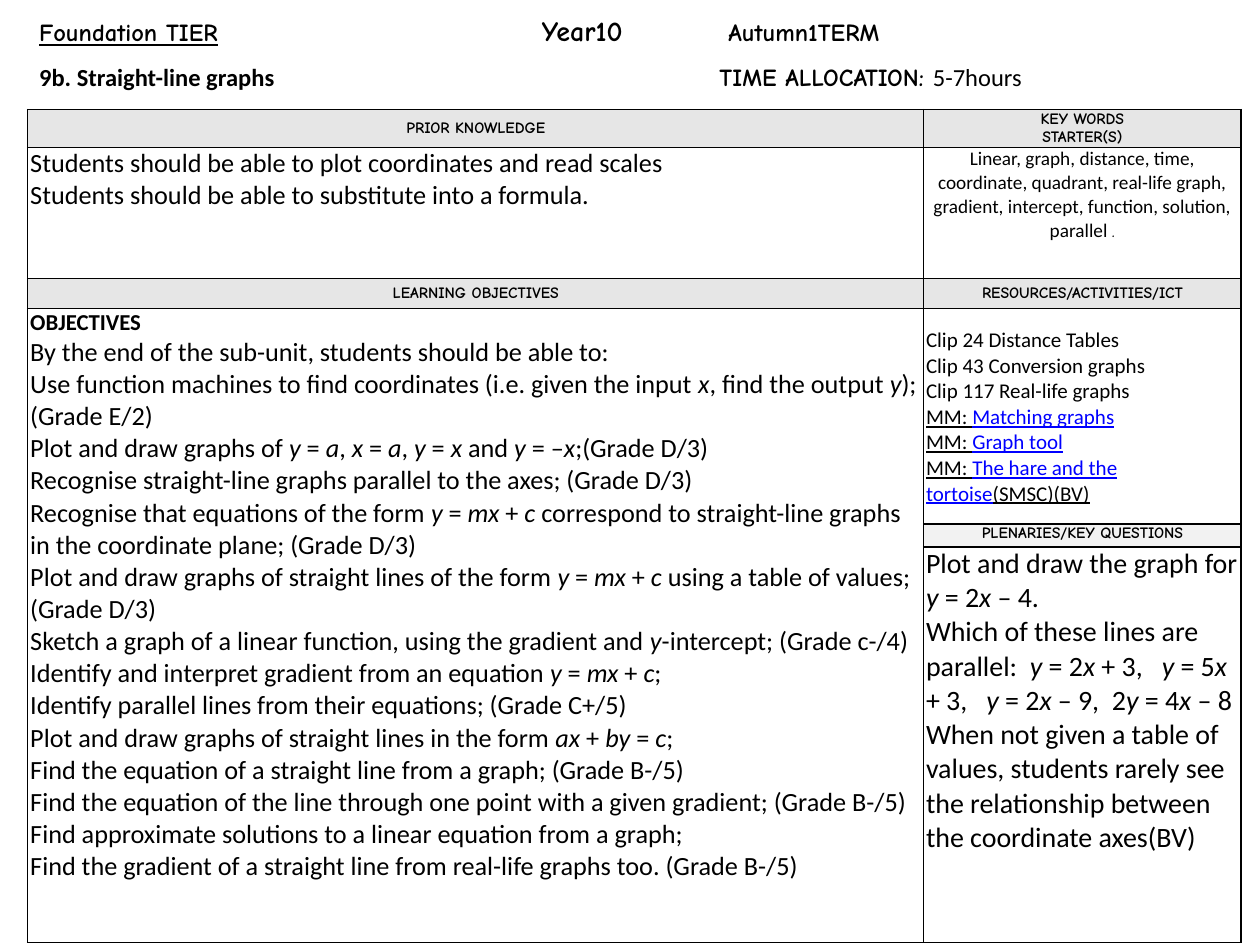
from lxml import etree
from pptx import Presentation
from pptx import util as u
from pptx.dml.color import RGBColor
from pptx.enum import text
from pptx.oxml import ns

# Formats
COMIC, PLAIN = "Comic Neue", "Calibri"
BLACK, BLUE, HEAD_GREY, PALE_GREY = "000000", "0000FF", "E6E6E6", "F2F2F2"
CENTER, MIDDLE = text.PP_ALIGN.CENTER, text.MSO_ANCHOR.MIDDLE
ITALIC = {"italic": True}
HEAD = {"name": COMIC, "size": 9, "bold": True}

# Heading: tab stops in inches, then (words, format)
heading = [
    ((3.99, 5.47), [
        ("Foundation TIER", {"name": COMIC, "size": 14, "bold": True, "underline": True}),
        ("\tYear10", {"name": COMIC, "size": 16, "bold": True}),
        ("\tAutumn1TERM", {"name": COMIC, "size": 14, "bold": True})]),
    ((5.4,), [
        ("9b. Straight-line graphs", {"name": PLAIN, "size": 14, "bold": True}),
        ("\tTIME ALLOCATION: ", {"name": COMIC, "size": 14, "bold": True}),
        ("5-7hours", {"name": PLAIN, "size": 14})]),
]

# Table content: words between asterisks take the cell's mark format
prior = [
    "Students should be able to plot coordinates and read scales",
    "Students should be able to substitute into a formula.",
]
key_words = ["Linear, graph, distance, time, coordinate, quadrant, real-life graph, "
             "gradient, intercept, function, solution, parallel *.*"]
objectives = [
    "By the end of the sub-unit, students should be able to:",
    "Use function machines to find coordinates (i.e. given the input *x*, "
    "find the output *y*); (Grade E/2)",
    "Plot and draw graphs of *y* = *a*, *x* = *a*, *y* = *x* and *y* = –*x*;(Grade D/3)",
    "Recognise straight-line graphs parallel to the axes; (Grade D/3)",
    "Recognise that equations of the form *y* = *mx* + *c* correspond to "
    "straight-line graphs in the coordinate plane; (Grade D/3)",
    "Plot and draw graphs of straight lines of the form *y* = *mx* + *c* "
    "using a table of values; (Grade D/3)",
    "Sketch a graph of a linear function, using the gradient and *y*-intercept; (Grade c-/4)",
    "Identify and interpret gradient from an equation *y* = *mx* + *c*;",
    "Identify parallel lines from their equations; (Grade C+/5)",
    "Plot and draw graphs of straight lines in the form *ax* + *by* = *c*;",
    "Find the equation of a straight line from a graph; (Grade B-/5)",
    "Find the equation of the line through one point with a given gradient; (Grade B-/5)",
    "Find approximate solutions to a linear equation from a graph;",
    "Find the gradient of a straight line from real-life graphs too. (Grade B-/5)",
]
clips = ["Clip 24 Distance Tables", "Clip 43 Conversion graphs", "Clip 117 Real-life graphs"]
web_resources = ["MM: *Matching graphs*", "MM: *Graph tool*",
                 "MM: *The hare and the tortoise*(SMSC)(BV)"]
questions = [
    "Plot and draw the graph for *y* = 2*x* – 4.",
    "Which of these lines are parallel:  *y* = 2*x* + 3,   *y* = 5*x* + 3,   "
    "*y* = 2*x* – 9,  2*y* = 4*x* – 8",
    "When not given a table of values, students rarely see the relationship "
    "between the coordinate axes(BV)",
]

# Cells: (row, column) -> groups of (lines, format, mark format), then layout
header = {"fill": HEAD_GREY, "anchor": MIDDLE, "align": CENTER}
body15 = {"name": PLAIN, "size": 15}
body12 = {"name": PLAIN, "size": 12}
cells = {
    (0, 0): ([(["PRIOR KNOWLEDGE"], HEAD, {})], header),
    (0, 1): ([(["KEY WORDS", "STARTER(S)"], HEAD, {})], header),
    (1, 0): ([(prior, body15, {})], {}),
    (1, 1): ([(key_words, {"name": PLAIN, "size": 11}, {"name": COMIC})], {"align": CENTER}),
    (2, 0): ([(["LEARNING OBJECTIVES"], HEAD, {})], header),
    (2, 1): ([(["RESOURCES/ACTIVITIES/ICT"], HEAD, {})], header),
    (3, 0): ([(["OBJECTIVES"], {"name": PLAIN, "size": 13, "bold": True}, {}),
              (objectives, body15, ITALIC)], {}),
    (3, 1): ([(clips, body12, {}),
              (web_resources, {**body12, "underline": True}, {"color": BLUE})], {"top": 0.15}),
    (4, 1): ([(["PLENARIES/KEY QUESTIONS"], HEAD, {})], {"fill": PALE_GREY, "align": CENTER}),
    (5, 1): ([(questions, {"name": PLAIN, "size": 16}, ITALIC)], {}),
}
COLUMNS = [7.11, 2.52]
ROWS = [0.3, 1.04, 0.24, 1.71, 0.18, 3.14]


def rgb(value):
    return RGBColor.from_string(value)


def add_run(paragraph, words, style):
    run = paragraph.add_run()
    run.text = words
    full = {"bold": False, "italic": False, "underline": False, "color": BLACK, **style}
    run.font.color.rgb = rgb(full.pop("color"))
    full["size"] = u.Pt(full["size"])
    for key, value in full.items():
        setattr(run.font, key, value)


def add_borders(cell):
    props = cell._tc.get_or_add_tcPr()
    for index, side in enumerate(("lnL", "lnR", "lnT", "lnB")):
        line = etree.Element(ns.qn("a:" + side), w=str(u.Pt(1)))
        fill = etree.SubElement(line, ns.qn("a:solidFill"))
        etree.SubElement(fill, ns.qn("a:srgbClr"), val=BLACK)
        props.insert(index, line)


def fill_cell(cell, groups, layout):
    margins = {"margin_left": 0.02, "margin_right": 0.02,
               "margin_top": layout.get("top", 0), "margin_bottom": 0}
    for key, value in margins.items():
        setattr(cell, key, u.Inches(value))
    cell.vertical_anchor = layout.get("anchor", text.MSO_ANCHOR.TOP)
    if "fill" in layout:
        cell.fill.solid()
        cell.fill.fore_color.rgb = rgb(layout["fill"])
    frame = cell.text_frame
    lines = [(line, style, mark) for group, style, mark in groups for line in group]
    for index, (line, style, mark) in enumerate(lines):
        paragraph = frame.add_paragraph() if index else frame.paragraphs[0]
        paragraph.alignment = layout.get("align", text.PP_ALIGN.LEFT)
        for part, words in enumerate(line.split("*")):
            if words:
                add_run(paragraph, words, {**style, **mark} if part % 2 else style)


prs = Presentation()
prs.slide_width, prs.slide_height = u.Inches(10), u.Inches(7.5)
slide = prs.slides.add_slide(prs.slide_layouts[6])

# Scheme of work table
table = slide.shapes.add_table(
    len(ROWS), len(COLUMNS), u.Inches(0.22), u.Inches(0.87),
    u.Inches(sum(COLUMNS)), u.Inches(sum(ROWS))).table
table.first_row = table.horz_banding = False
for column, width in zip(table.columns, COLUMNS):
    column.width = u.Inches(width)
for row, height in zip(table.rows, ROWS):
    row.height = u.Inches(height)
for cell in table.iter_cells():
    cell.fill.background()
    add_borders(cell)
table.cell(3, 0).merge(table.cell(5, 0))
for place, (groups, layout) in cells.items():
    fill_cell(table.cell(*place), groups, layout)

# Heading lines
title = slide.shapes.add_textbox(
    u.Inches(0.22), u.Inches(0.03), u.Inches(9.78), u.Inches(1.25)).text_frame
title.word_wrap = True
title.margin_top = title.margin_bottom = u.Inches(0.04)
title.margin_left = title.margin_right = u.Inches(0.09)
for index, (stops, runs) in enumerate(heading):
    paragraph = title.add_paragraph() if index else title.paragraphs[0]
    paragraph.line_spacing = 1.15
    paragraph.space_after = u.Pt(6)
    tabs = etree.SubElement(paragraph._p.get_or_add_pPr(), ns.qn("a:tabLst"))
    for stop in stops:
        etree.SubElement(tabs, ns.qn("a:tab"), pos=str(u.Inches(stop)), algn="l")
    for words, style in runs:
        add_run(paragraph, words, style)

prs.save("out.pptx")
